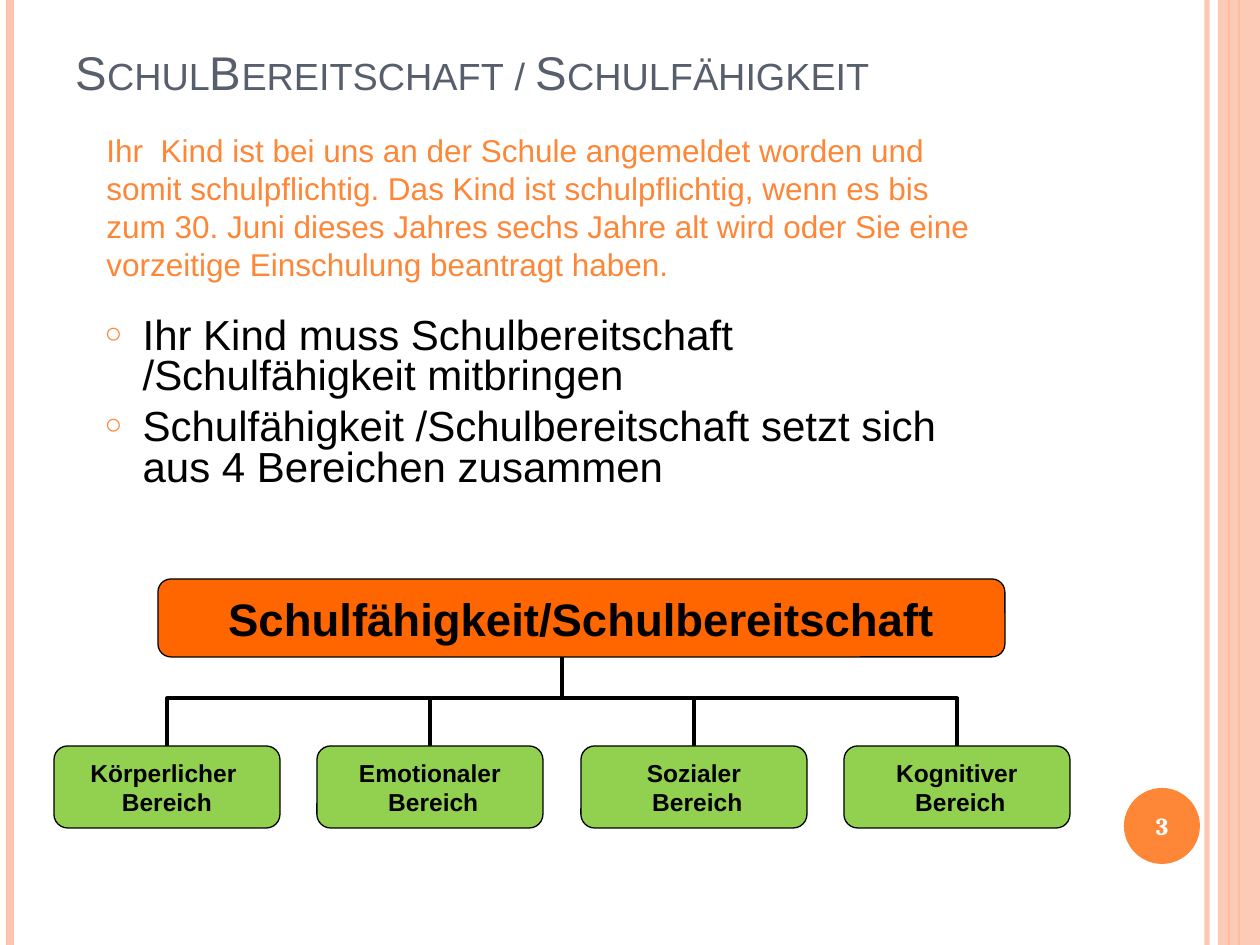
from pptx import Presentation
from pptx.dml.color import RGBColor
from pptx.enum.shapes import MSO_CONNECTOR as Connector, MSO_SHAPE as Shape
from pptx.enum.text import MSO_ANCHOR as Anchor, MSO_AUTO_SIZE as AutoSize, PP_ALIGN as Align
from pptx.oxml.ns import qn
from pptx.util import Pt
from lxml.etree import SubElement
from dataclasses import dataclass

TITLE = "SchulBereitschaft / Schulfähigkeit"
INTRO = ("Ihr  Kind ist bei uns an der Schule angemeldet worden und somit schulpflichtig. "
         "Das Kind ist schulpflichtig, wenn es bis zum 30. Juni dieses Jahres sechs Jahre alt "
         "wird oder Sie eine vorzeitige Einschulung beantragt haben.")
BULLETS = [
    "Ihr Kind muss Schulbereitschaft /Schulfähigkeit mitbringen",
    "Schulfähigkeit /Schulbereitschaft setzt sich aus 4 Bereichen zusammen",
]
ROOT = "Schulfähigkeit/Schulbereitschaft"
AREAS = ["Körperlicher \n Bereich".replace("\n ", "\n"), "Emotionaler\n Bereich",
         "Sozialer\n Bereich", "Kognitiver\n Bereich"]
PAGE_NUMBER = "3"


@dataclass(frozen=True)
class Theme:
    accent: str = "FE8637"
    pale: str = "FEC3AE"
    heading: str = "575F6D"
    ink: str = "000000"
    white: str = "FFFFFF"
    root: str = "FF6600"
    area: str = "92D050"
    font: str = "Arial"
    number_font: str = "Cambria"
    title_size: int = 27
    root_size: int = 26
    bullet_size: int = 24
    intro_size: int = 18
    small_size: int = 14


THEME = Theme()
# Vertical rules: x in px, colour, width in pt, opacity in percent
RULES = [(1207, THEME.pale, 3, 93), (10, THEME.pale, 4.5, 100),
         (1239, THEME.accent, 1.5, 100), (1229, THEME.accent, 0.75, 100)]
BAND = (1218, 0, 42, 945)
DISC = (1124, 788, 76, 76)
TITLE_BOX = (63, 38, 1029, 68)
INTRO_BOX = (94, 125, 893, 165)
BULLET_BOX = (92, 312, 895, 240)
NUMBER_BOX = (1120, 790, 84, 72)
ROOT_BOX = (158, 579, 847, 78)
AREA_LEFT, AREA_TOP, AREA_WIDTH, AREA_HEIGHT = 54, 746, 226, 82
AREA_SPAN = 790  # from first to last area box
TRUNK_X, TRUNK_Y = 562, 651
WIDTH, HEIGHT = 1260, 945
BULLET_INDENT = 38


def px(value):
    return round(value * 914400 / 126)


def box(values):
    return [px(value) for value in values]


def place(shape, values):
    shape.left, shape.top, shape.width, shape.height = box(values)


def set_opacity(fill, percent):
    colour = fill._xPr.find(qn("a:solidFill"))[0]
    SubElement(colour, qn("a:alpha"), val=str(percent * 1000))


def write(shape, text, size, colour, align=Align.LEFT, font=THEME.font, bold=False):
    frame = shape.text_frame
    frame.text = text
    for paragraph in frame.paragraphs:
        paragraph.alignment = align
        for run in paragraph.runs:
            run.font.name, run.font.size, run.font.bold = font, Pt(size), bold
            run.font.color.rgb = RGBColor.from_string(colour)
    return frame


def add_filled(slide, kind, values, colour, outlined=False):
    shape = slide.shapes.add_shape(kind, *box(values))
    shape.shadow.inherit = False
    shape.fill.solid()
    shape.fill.fore_color.rgb = RGBColor.from_string(colour)
    if outlined:
        shape.line.color.rgb = RGBColor.from_string(THEME.ink)
        shape.line.width = Pt(0.75)
    else:
        shape.line.fill.background()
    return shape


def add_line(slide, kind, ends, colour, width):
    line = slide.shapes.add_connector(kind, *box(ends))
    line.line.color.rgb = RGBColor.from_string(colour)
    line.line.width = Pt(width)
    SubElement(line._element.spPr, qn("a:effectLst"))
    return line


def add_branch(slide, x):
    """Elbow from an area's top up to the trunk, turned so it leaves vertically."""
    rise, run = AREA_TOP - TRUNK_Y, abs(TRUNK_X - x)
    left = (x + TRUNK_X - rise) / 2
    top = (AREA_TOP + TRUNK_Y - run) / 2
    right, bottom = left + rise, top + run
    if x < TRUNK_X:
        ends, turn = (right, bottom, left, top), 90
    else:
        ends, turn = (left, bottom, right, top), 270
    branch = add_line(slide, Connector.ELBOW, ends, THEME.ink, 2.25)
    branch._element.spPr.find(qn("a:xfrm")).set("rot", str(turn * 60000))


def add_node(slide, values, text, colour, size):
    node = add_filled(slide, Shape.ROUNDED_RECTANGLE, values, colour, outlined=True)
    frame = write(node, text, size, THEME.ink, Align.CENTER, bold=True)
    frame.margin_left = frame.margin_right = frame.margin_top = frame.margin_bottom = 0
    frame.vertical_anchor = Anchor.MIDDLE
    frame.word_wrap = False


def add_text(slide, values, *style, **options):
    text_box = slide.shapes.add_textbox(*box(values))
    frame = write(text_box, *style, **options)
    frame.word_wrap = True
    return frame


def add_decoration(slide):
    for x, colour, width, opacity in RULES:
        rule = add_line(slide, Connector.STRAIGHT, (x, 0, x, HEIGHT), colour, width)
        if opacity < 100:
            set_opacity(rule.line.fill, opacity)
    band = add_filled(slide, Shape.RECTANGLE, BAND, THEME.pale)
    set_opacity(band.fill, 87)
    # The thin rules lie over the band
    band._element.addprevious(band._element)
    add_filled(slide, Shape.OVAL, DISC, THEME.accent)


def fill_title(title):
    place(title, TITLE_BOX)
    frame = write(title, TITLE, THEME.title_size, THEME.heading)
    frame.vertical_anchor = Anchor.BOTTOM
    frame.auto_size = AutoSize.NONE
    frame.paragraphs[0].runs[0].font._element.set("cap", "small")


def fill_bullets(body):
    place(body, BULLET_BOX)
    frame = write(body, "\n".join(BULLETS), THEME.bullet_size, THEME.ink)
    frame.auto_size = AutoSize.NONE
    for paragraph in frame.paragraphs:
        paragraph.line_spacing = 0.8
        paragraph.space_before = Pt(6)
        properties = paragraph._p.get_or_add_pPr()
        properties.set("marL", str(px(BULLET_INDENT)))
        properties.set("indent", str(-px(BULLET_INDENT)))
        colour = SubElement(properties, qn("a:buClr"))
        SubElement(colour, qn("a:srgbClr"), val=THEME.accent)
        SubElement(properties, qn("a:buSzPct"), val="70000")
        SubElement(properties, qn("a:buChar"), char="○")


def add_chart_of_areas(slide):
    lefts = [AREA_LEFT + round(i * AREA_SPAN / (len(AREAS) - 1)) for i in range(len(AREAS))]
    for left in reversed(lefts):
        add_branch(slide, left + AREA_WIDTH / 2)
    for left, text in zip(lefts, AREAS):
        add_node(slide, (left, AREA_TOP, AREA_WIDTH, AREA_HEIGHT), text,
                 THEME.area, THEME.small_size)
    add_node(slide, ROOT_BOX, ROOT, THEME.root, THEME.root_size)


def main():
    presentation = Presentation()
    presentation.slide_width, presentation.slide_height = px(WIDTH), px(HEIGHT)
    slide = presentation.slides.add_slide(presentation.slide_layouts[1])
    add_decoration(slide)
    fill_title(slide.shapes.title)
    fill_bullets(slide.placeholders[1])
    add_text(slide, INTRO_BOX, INTRO, THEME.intro_size, THEME.accent)
    add_chart_of_areas(slide)
    number = add_text(slide, NUMBER_BOX, PAGE_NUMBER, THEME.small_size, THEME.white,
                      Align.CENTER, font=THEME.number_font, bold=True)
    number.vertical_anchor = Anchor.MIDDLE
    presentation.save("out.pptx")


if __name__ == "__main__":
    main()
